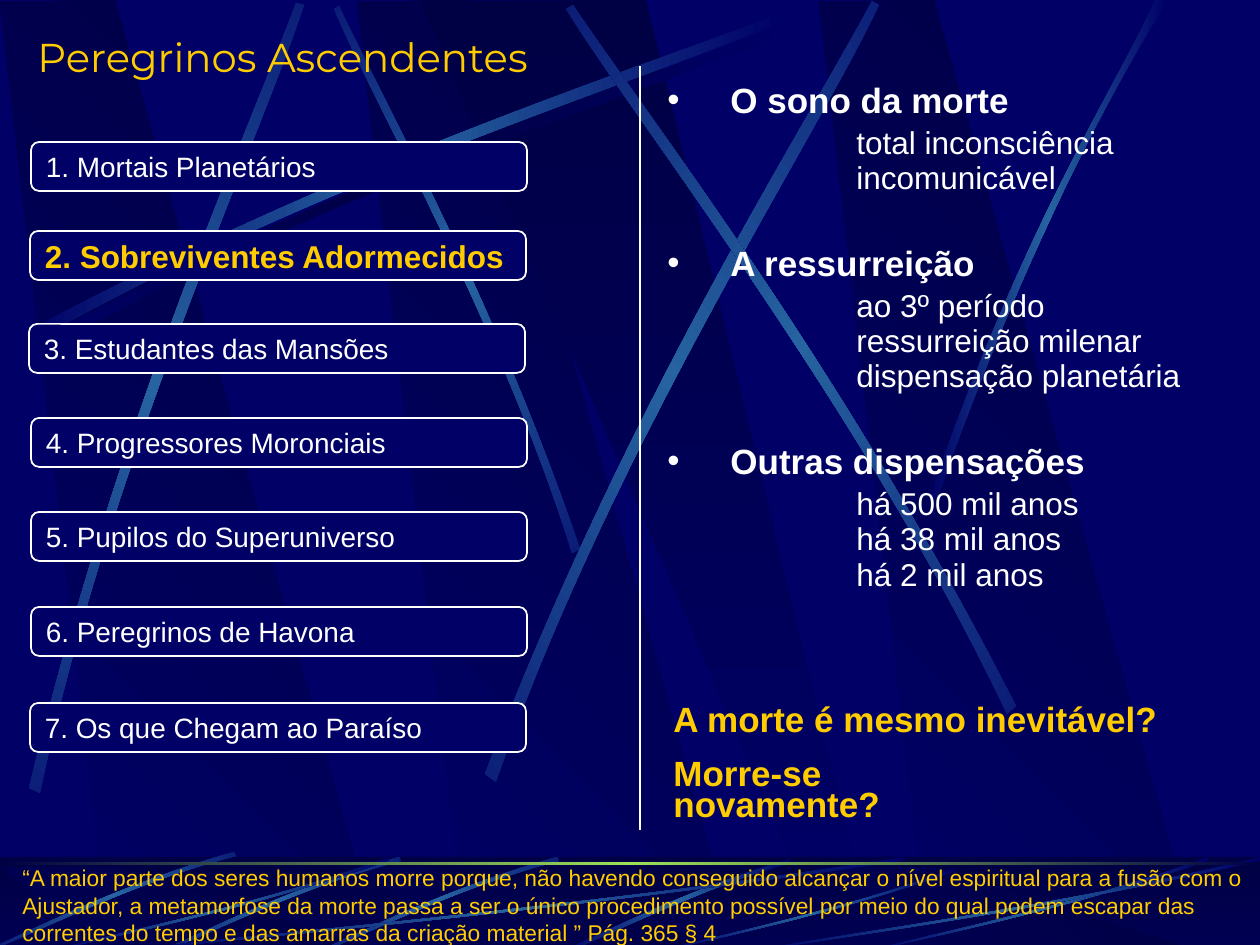
import math

import pptx
import pptx.util
import pptx.dml.color
import pptx.enum.shapes
import pptx.enum.text
import pptx.oxml.ns
from lxml import etree

RGBColor = pptx.dml.color.RGBColor
NAVY = RGBColor(0x00, 0x00, 0x66)
DARK = RGBColor(0x00, 0x00, 0x44)
STEEL = RGBColor(0x26, 0x63, 0xA0)
GREEN = RGBColor(0x9C, 0xE1, 0x57)
GOLD = RGBColor(0xFF, 0xCC, 0x00)
WHITE = RGBColor(0xFF, 0xFF, 0xFF)

WIDTH, HEIGHT = 1260, 945
EMU_PER_PX = 914400 / 126

TITLE = "Peregrinos Ascendentes"
QUOTE = (
    "“A maior parte dos seres humanos morre porque, não havendo conseguido alcançar o nível "
    "espiritual para a fusão com o Ajustador, a metamorfose da morte passa a ser o único "
    "procedimento possível por meio do qual podem escapar das correntes do tempo e das amarras "
    "da criação material ” Pág. 365 § 4"
)
STAGES = [  # text, left, top
    ("1. Mortais Planetários", 31, 142),
    ("2. Sobreviventes Adormecidos", 30, 231),
    ("3. Estudantes das Mansões", 29, 324),
    ("4. Progressores Moronciais", 31, 418),
    ("5. Pupilos do Superuniverso", 31, 512),
    ("6. Peregrinos de Havona", 31, 607),
    ("7. Os que Chegam ao Paraíso", 30, 703),
]
CURRENT_STAGE = 1
TOPICS = [
    ("O sono da morte", ["total inconsciência", "incomunicável"]),
    ("A ressurreição", ["ao 3º período", "ressurreição milenar", "dispensação planetária"]),
    ("Outras dispensações", ["há 500 mil anos", "há 38 mil anos", "há 2 mil anos"]),
]
QUESTIONS = [  # text, top, width, wraps
    ("A morte é mesmo inevitável?", 701, 509, False),
    ("Morre-se novamente?", 755, 362, True),
]

# Background outlines: panels and beam are polygons, ribbons are two cubic curves
PANEL = [(109, 945), (380, 947), (115, 0), (0, 2)]
PANEL_LEFTS = [357, 0, 819]
BEAM = [(420, 1), (829, 946), (874, 946), (646, 0)]
RIBBONS = [  # middle colour, rotation, eight control points
    (DARK, 0, [(25, 347), (358, 169), (660, 74), (789, 23),
               (793, 30), (665, 87), (320, 190), (29, 359)]),
    (STEEL, 45, [(580, 549), (493, 295), (381, 97), (339, 6),
                 (334, 9), (372, 100), (501, 325), (572, 553)]),
    (STEEL, 0, [(18, 336), (350, 158), (653, 64), (781, 13),
                (785, 20), (658, 77), (312, 180), (21, 349)]),
    (STEEL, 311.7, [(29, 788), (117, 421), (248, 132), (296, 3),
                    (304, 5), (261, 137), (108, 464), (40, 793)]),
    (STEEL, 321.6, [(485, 774), (627, 403), (804, 129), (872, 1),
                    (879, 5), (818, 136), (612, 447), (496, 782)]),
    (STEEL, 34.7, [(1016, 706), (844, 369), (650, 120), (573, 5),
                   (566, 9), (639, 127), (863, 410), (1007, 714)]),
    (STEEL, 0, [(930, 496), (1026, 218), (1119, 83), (1155, 0),
                (1168, 0), (1053, 183), (969, 406), (937, 500)]),
]
FOOTER_RIBBON = [(790, 859), (677, 893), (601, 935), (564, 950),
                 (571, 951), (617, 930), (719, 882), (791, 863)]
SHORT_RIBBON = [(557, 857), (447, 888), (362, 932), (323, 949),
                (324, 951), (363, 936), (460, 886), (559, 861)]
SHORT_SHIFTS = [(0, 0), (-158, 0), (-323, -5)]
STREAK = [(1, 0.04), (0.57, 0.57), (0.17, 0.85), (0, 1),
          (0, 0.99), (0.17, 0.82), (0.62, 0.51), (1, 0)]
STREAK_BOXES = [(126, 857, 777, 94), (53, 857, 336, 94), (664, 868, 291, 83),
                (872, 857, 336, 94), (756, 857, 504, 94)]


def px(value):
    return pptx.util.Emu(round(value * EMU_PER_PX))


def box(*lengths):
    return [px(length) for length in lengths]


def fill_gradient(shape, colours, angle):
    """Spread colours evenly; the angle is counter-clockwise."""
    shape.fill.gradient()
    shape.fill.gradient_angle = angle
    qn = pptx.oxml.ns.qn
    stops = shape._element.spPr.find(".//" + qn("a:gsLst"))
    for stop in list(stops):
        stops.remove(stop)
    for index, colour in enumerate(colours):
        position = str(100000 * index // (len(colours) - 1))
        stop = etree.SubElement(stops, qn("a:gs"), pos=position)
        etree.SubElement(stop, qn("a:srgbClr"), val=str(colour))


def add_outline(points, colours, angle):
    points = [box(*point) for point in points]
    builder = shapes.build_freeform(*points[0], scale=1.0)
    builder.add_line_segments(points[1:], close=True)
    shape = builder.convert_to_shape()
    shape.shadow.inherit = False
    shape.line.fill.background()
    fill_gradient(shape, colours, angle)
    return shape


def turn(point, degrees):
    angle = math.radians(degrees)
    x, y = point
    return (x * math.cos(angle) - y * math.sin(angle), x * math.sin(angle) + y * math.cos(angle))


def unrotate(points, rotation):
    """Points which, once the shape is rotated about its centre, land on the given ones."""
    turned = [turn(point, -rotation) for point in points]
    middle = [(min(axis) + max(axis)) / 2 for axis in zip(*turned)]
    centre = turn(middle, rotation)
    return [(x - middle[0] + centre[0], y - middle[1] + centre[1]) for x, y in turned]


def add_ribbon(controls, middle=STEEL, rotation=0):
    shape = add_outline(unrotate(controls, rotation), [NAVY, middle, NAVY], 0)
    shape.rotation = rotation
    # Join each three line ends after a corner into one cubic curve
    qn = pptx.oxml.ns.qn
    segments = shape._element.spPr.findall(".//" + qn("a:lnTo"))
    for first in (0, 4):
        cubic = etree.Element(qn("a:cubicBezTo"))
        segments[first].addprevious(cubic)
        for segment in segments[first:first + 3]:
            cubic.append(segment[0])
            segment.getparent().remove(segment)


def add_panels(top, bottom):
    scale = (bottom - top) / HEIGHT
    for left in PANEL_LEFTS:
        add_outline([(left + x, top + y * scale) for x, y in PANEL], [NAVY, DARK], 45)
    add_outline([(x, top + y * scale) for x, y in BEAM], [DARK, NAVY], 270)


def add_preset(kind, *lengths):
    shape = shapes.add_shape(kind, *box(*lengths))
    shape.shadow.inherit = False
    shape.line.fill.background()
    return shape


def add_run(paragraph, text, size, colour, bold=False, font="Arial"):
    run = paragraph.add_run()
    run.text = text
    run.font.name, run.font.size, run.font.bold = font, pptx.util.Pt(size), bold
    run.font.color.rgb = colour


def add_text_frame(*lengths, wrap=True):
    frame = shapes.add_textbox(*box(*lengths)).text_frame
    frame.word_wrap = wrap
    return frame


def set_indent(paragraph, margin, indent, bullet=None):
    properties = paragraph._p.get_or_add_pPr()
    properties.set("marL", str(px(margin)))
    properties.set("indent", str(px(indent)))
    if bullet:
        etree.SubElement(properties, pptx.oxml.ns.qn("a:buFont"), typeface="Arial")
        etree.SubElement(properties, pptx.oxml.ns.qn("a:buChar"), char=bullet)


presentation = pptx.Presentation()
presentation.slide_width, presentation.slide_height = px(WIDTH), px(HEIGHT)
slide = presentation.slides.add_slide(presentation.slide_layouts[6])
shapes = slide.shapes
SHAPE = pptx.enum.shapes.MSO_SHAPE
MIDDLE = pptx.enum.text.MSO_ANCHOR.MIDDLE

# Background
slide.background.fill.solid()
slide.background.fill.fore_color.rgb = NAVY
add_panels(0, HEIGHT)
for middle, rotation, controls in RIBBONS:
    add_ribbon(controls, middle, rotation)

# Footer band
fill_gradient(add_preset(SHAPE.RECTANGLE, 0, 857, WIDTH, 94), [DARK, NAVY], 270)
add_panels(867, 951)
veil = add_preset(SHAPE.RECTANGLE, 0, 857, WIDTH, 94)
veil.fill.solid()
veil.fill.fore_color.rgb = DARK
veil_colour = veil._element.spPr.find(".//" + pptx.oxml.ns.qn("a:srgbClr"))
etree.SubElement(veil_colour, pptx.oxml.ns.qn("a:alpha"), val="50000")
add_ribbon(FOOTER_RIBBON)
for dx, dy in SHORT_SHIFTS:
    add_ribbon([(x + dx, y + dy) for x, y in SHORT_RIBBON], rotation=315)
for left, top, width, height in STREAK_BOXES:
    add_ribbon([(left + x * width, top + y * height) for x, y in STREAK])
fill_gradient(add_preset(SHAPE.RECTANGLE, 0, 862, WIDTH, 3), [DARK, GREEN, DARK], 0)

# Quote and title
quote_frame = add_text_frame(10, 858, 1250, 94)
quote_frame.vertical_anchor = MIDDLE
add_run(quote_frame.paragraphs[0], QUOTE, 13, GOLD)
title_frame = add_text_frame(25, 26, 563, 60, wrap=False)
add_run(title_frame.paragraphs[0], TITLE, 23, GOLD, font="Montserrat")

# Topics
topic_frame = add_text_frame(655, 72, 571, 559)
for index, (heading, details) in enumerate(TOPICS):
    paragraph = topic_frame.add_paragraph() if index else topic_frame.paragraphs[0]
    set_indent(paragraph, 63, -63, "•")
    if index:
        paragraph.space_before = pptx.util.Pt(25.5)
    add_run(paragraph, heading, 20, WHITE, bold=True)
    for position, detail in enumerate(details):
        paragraph = topic_frame.add_paragraph()
        set_indent(paragraph, 189, 0)
        paragraph.line_spacing = 0.93
        paragraph.space_before = pptx.util.Pt(0 if position else 3.5)
        add_run(paragraph, detail, 18, WHITE)

# Divider
divider = shapes.add_connector(pptx.enum.shapes.MSO_CONNECTOR.STRAIGHT, *box(640, 66, 640, 830))
divider.line.color.rgb = WHITE
divider.line.width = pptx.util.Pt(1)
etree.SubElement(divider._element.spPr, pptx.oxml.ns.qn("a:effectLst"))

# Stages
for index, (text, left, top) in enumerate(STAGES):
    stage = add_preset(SHAPE.FLOWCHART_ALTERNATE_PROCESS, left, top, 496, 49)
    stage.fill.solid()
    stage.fill.fore_color.rgb = NAVY
    stage.line.color.rgb = WHITE
    stage.line.width = pptx.util.Pt(1)
    stage.text_frame.vertical_anchor = MIDDLE
    paragraph = stage.text_frame.paragraphs[0]
    paragraph.alignment = pptx.enum.text.PP_ALIGN.LEFT
    current = index == CURRENT_STAGE
    add_run(paragraph, text, 18 if current else 16, GOLD if current else WHITE, current)

# Questions
for text, top, width, wraps in QUESTIONS:
    paragraph = add_text_frame(661, top, width, 44, wrap=wraps).paragraphs[0]
    paragraph.line_spacing = 0.75
    add_run(paragraph, text, 20, GOLD, bold=True)

presentation.save("out.pptx")
